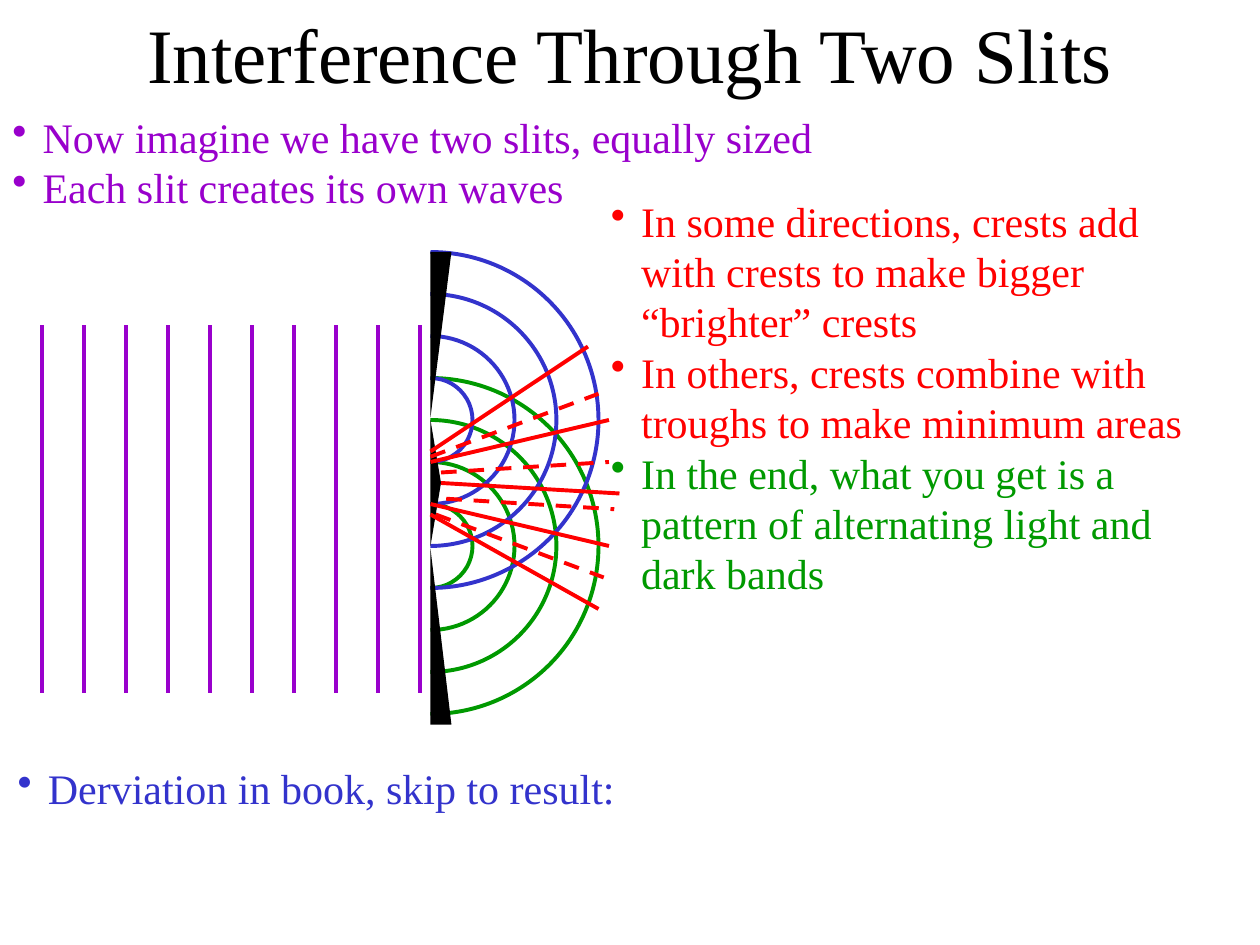
from lxml import etree
from pptx import Presentation
from pptx.dml.color import RGBColor
from pptx.enum.dml import MSO_LINE
from pptx.enum.shapes import MSO_CONNECTOR, MSO_SHAPE
from pptx.enum.text import MSO_ANCHOR, MSO_AUTO_SIZE, PP_ALIGN
from pptx.oxml.ns import qn
from pptx.util import Inches, Pt

STRAIGHT = MSO_CONNECTOR.STRAIGHT
ARC, TRIANGLE = MSO_SHAPE.ARC, MSO_SHAPE.ISOSCELES_TRIANGLE
DASH, SOLID = MSO_LINE.DASH, MSO_LINE.SOLID
TOP, CENTER, LEFT = MSO_ANCHOR.TOP, PP_ALIGN.CENTER, PP_ALIGN.LEFT
NO_AUTOFIT = MSO_AUTO_SIZE.NONE

BLACK = RGBColor(0x00, 0x00, 0x00)
PURPLE = RGBColor(0x99, 0x00, 0xCC)
GREEN = RGBColor(0x00, 0x99, 0x00)
BLUE = RGBColor(0x33, 0x33, 0xCC)
RED = RGBColor(0xFF, 0x00, 0x00)

COLUMNS, ROWS = 120, 90
CELL = Inches(10) / COLUMNS
FONT = "Times New Roman"
LINE_WIDTH = Pt(2.25)
BULLET_INDENT = Inches(0.24)
WAVE_STEP = 4

TITLE_BOX = (0, 0, 120, 10)
INTRO_BOX = (0, 10, 113, 10.8)
RESULT_BOX = (57, 18, 60, 39.6)
CLOSING_BOX = (0.5, 72, 113, 6)
INCOMING_BOX = (4, 31, 36, 35)
SLITS_BOX = (41, 24, 18, 45)

INTRO = [
    ("Now imagine we have two slits, equally sized", PURPLE),
    ("Each slit creates its own waves", PURPLE),
]
RESULTS = [
    ("In some directions, crests add with crests to make bigger “brighter” crests", RED),
    ("In others, crests combine with troughs to make minimum areas", RED),
    ("In the end, what you get is a pattern of alternating light and dark bands", GREEN),
]
CLOSING = [("Derviation in book, skip to result:", BLUE)]

UPPER_SLIT, LOWER_SLIT = 16, 28
BRIGHT_RAYS = [
    (1, 22, 18, 23), (0, 20, 17, 16), (0, 19, 15, 9),
    (0, 24, 17, 28), (0, 25, 16, 34),
]
DARK_RAYS = [
    (1, 21, 17, 20), (0, 19.5, 16, 13.5),
    (1.5, 23.5, 17.5, 24.5), (0.5, 25, 16.5, 31),
]


def grid(*cells):
    """Convert grid cells to slide lengths."""
    return [round(cell * CELL) for cell in cells]


def apply_format(target, values):
    """Set attributes from a dict of format values."""
    for name, value in values.items():
        setattr(target, name, value)


def format_text(paragraph, size, color, alignment):
    """Give a paragraph its font, colour and alignment."""
    paragraph.alignment = alignment
    apply_format(paragraph.font, {"name": FONT, "size": Pt(size)})
    paragraph.font.color.rgb = color


def add_title(slide, box, text):
    """Move and format the title placeholder."""
    title = slide.shapes.title
    apply_format(title, dict(zip(("left", "top", "width", "height"), grid(*box))))
    frame = title.text_frame
    frame.text = text
    apply_format(frame, {"word_wrap": True, "vertical_anchor": TOP, "auto_size": NO_AUTOFIT})
    format_text(frame.paragraphs[0], 44, BLACK, CENTER)


def add_bullets(slide, box, items):
    """Place a list of coloured bullets in a box."""
    frame = slide.shapes.add_textbox(*grid(*box)).text_frame
    frame.word_wrap = True
    for index, (text, color) in enumerate(items):
        paragraph = frame.add_paragraph() if index else frame.paragraphs[0]
        paragraph.text = text
        properties = paragraph._p.get_or_add_pPr()
        properties.set("marL", str(BULLET_INDENT))
        properties.set("indent", str(-BULLET_INDENT))
        etree.SubElement(properties, qn("a:buChar")).set("char", "•")
        format_text(paragraph, 24, color, LEFT)


def add_line(slide, ends, color, dash=SOLID):
    """Draw a straight line between two grid points."""
    line = slide.shapes.add_connector(STRAIGHT, *grid(*ends))
    apply_format(line.line, {"width": LINE_WIDTH, "dash_style": dash})
    line.line.color.rgb = color
    etree.SubElement(line._element.spPr, qn("a:effectLst"))


def add_incoming_waves(slide, box):
    """Draw evenly spaced wave fronts across a box."""
    left, top, width, height = box
    for x in range(left, left + width + 1, WAVE_STEP):
        add_line(slide, (x, top, x, top + height), PURPLE)


def add_slit_waves(slide, x, y, color):
    """Draw half circles that spread from one slit."""
    for radius in range(WAVE_STEP, 4 * WAVE_STEP + 1, WAVE_STEP):
        arc = slide.shapes.add_shape(
            ARC, *grid(x - radius, y - radius, 2 * radius, 2 * radius))
        arc.adjustments[0], arc.adjustments[1] = 162, 54
        arc.shadow.inherit = False
        arc.fill.background()
        arc.line.width = LINE_WIDTH
        arc.line.color.rgb = color


def fill_black(shape):
    """Make a shape plain black."""
    shape.shadow.inherit = False
    shape.fill.solid()
    shape.fill.fore_color.rgb = BLACK
    shape.line.fill.background()


def add_barrier(slide, box):
    """Draw the two outer wedges and the wedge between the slits."""
    left, top, width, height = box
    for edge, tip in ((top, top + 15.75), (top + height, top + 28.25)):
        builder = slide.shapes.build_freeform(*grid(left, edge))
        builder.add_line_segments([grid(left, tip), grid(left + 2, edge)])
        fill_black(builder.convert_to_shape())
    gap = LOWER_SLIT - UPPER_SLIT
    middle = top + (UPPER_SLIT + LOWER_SLIT) / 2
    wedge = slide.shapes.add_shape(
        TRIANGLE, *grid(left + 0.5 - gap / 2, middle - 0.5, gap, 1))
    wedge.rotation = 90
    fill_black(wedge)


def add_slits(slide, box):
    """Draw the waves, barrier and rays of the two slits."""
    left, top, width, height = box
    for slit, color in ((LOWER_SLIT, GREEN), (UPPER_SLIT, BLUE)):
        add_slit_waves(slide, left, top + slit, color)
    add_barrier(slide, box)
    for rays, dash in ((BRIGHT_RAYS, SOLID), (DARK_RAYS, DASH)):
        for x1, y1, x2, y2 in rays:
            add_line(slide, (left + x1, top + y1, left + x2, top + y2), RED, dash)


def main():
    """Build and save the slide."""
    presentation = Presentation()
    presentation.slide_width, presentation.slide_height = grid(COLUMNS, ROWS)
    slide = presentation.slides.add_slide(presentation.slide_layouts[5])
    add_title(slide, TITLE_BOX, "Interference Through Two Slits")
    add_bullets(slide, INTRO_BOX, INTRO)
    add_incoming_waves(slide, INCOMING_BOX)
    add_bullets(slide, RESULT_BOX, RESULTS)
    add_slits(slide, SLITS_BOX)
    add_bullets(slide, CLOSING_BOX, CLOSING)
    presentation.save("out.pptx")


if __name__ == "__main__":
    main()
